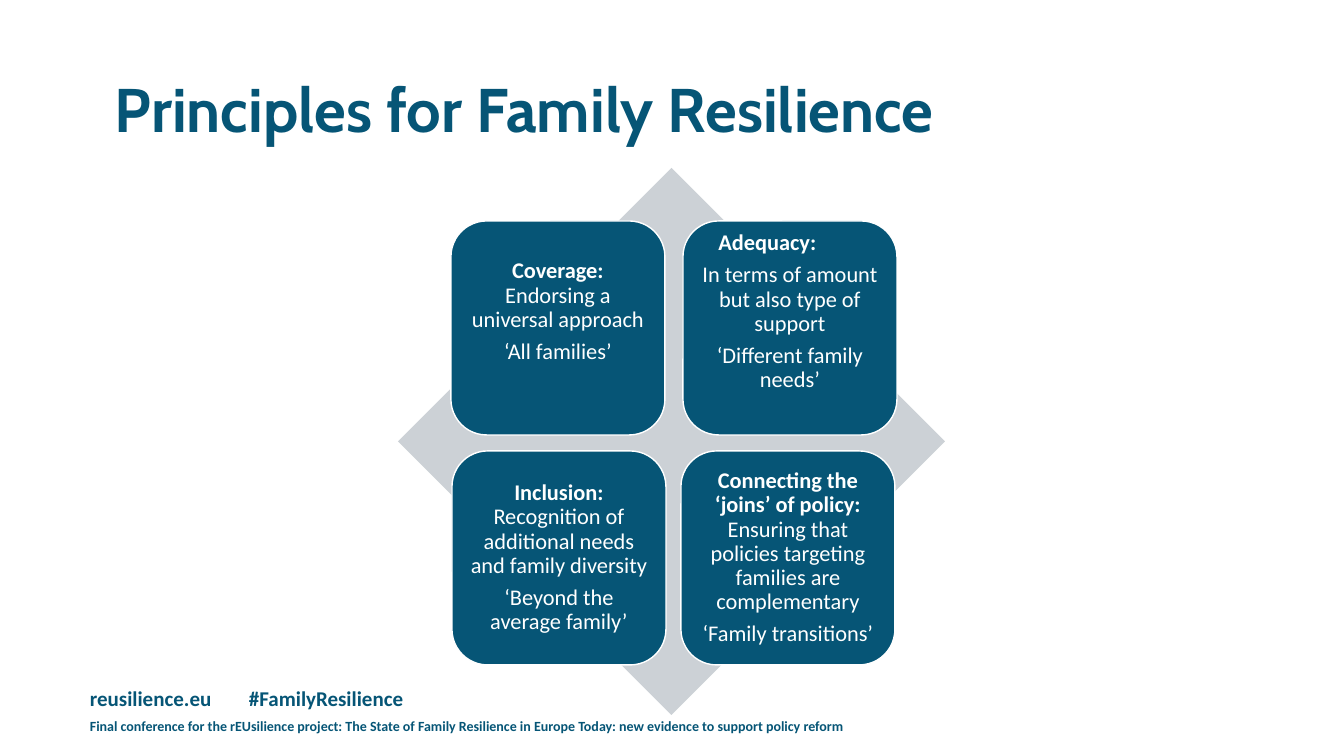
from lxml import etree
from pptx import Presentation
from pptx.dml.color import RGBColor
from pptx.enum.shapes import MSO_SHAPE
from pptx.enum.text import MSO_ANCHOR, PP_ALIGN
from pptx.oxml.ns import qn
from pptx.util import Emu, Pt

DIAMOND, ROUNDED = MSO_SHAPE.DIAMOND, MSO_SHAPE.ROUNDED_RECTANGLE
TOP, MIDDLE = MSO_ANCHOR.TOP, MSO_ANCHOR.MIDDLE
LEFT, CENTER = PP_ALIGN.LEFT, PP_ALIGN.CENTER

COLORS = {"teal": "065576", "grey": "CCD1D6", "white": "FFFFFF"}
EMU_PER_PX = 914400 / 100.8
CARD_SIZE, CARD_INSET, LINE_ROOM = 214, 7, 32

# Each card: offset from the diamond's corner, room kept free below the text,
# paragraphs as (bold text, plain text, left indent or None when centred)
PRINCIPLES = [
    (53, 53, LINE_ROOM, [("Coverage: ", "Endorsing a universal approach", None),
                         ("", "‘All families’", None)]),
    (285, 53, LINE_ROOM, [("Adequacy:", "", 18),
                          ("", "In terms of amount but also type of support", None),
                          ("", "‘Different family needs’", None)]),
    (54, 283, 0, [("Inclusion: ", "Recognition of additional needs and family diversity", None),
                  ("", "‘Beyond the average family’", None)]),
    (283, 283, 0, [("Connecting the ‘joins’ of policy: ",
                    "Ensuring that policies targeting families are complementary", None),
                   ("", "‘Family transitions’", None)]),
]


def px(length):
    return Emu(round(length * EMU_PER_PX))


def rgb(name):
    return RGBColor.from_string(COLORS[name])


def add_run(paragraph, text, size, color="teal", font="Calibri", bold=True):
    run = paragraph.add_run()
    run.text = text
    run.font.size = Pt(size)
    run.font.name = font
    run.font.bold = bold
    run.font.color.rgb = rgb(color)


def add_text(slide, box, text, anchor=TOP, line_spacing=None, tab=None, **style):
    """One-paragraph text box; tab is the position of a tab stop in px."""
    frame = slide.shapes.add_textbox(*map(px, box)).text_frame
    frame.word_wrap = True
    frame.vertical_anchor = anchor
    paragraph = frame.paragraphs[0]
    paragraph.line_spacing = line_spacing
    if tab:
        stops = etree.SubElement(paragraph._p.get_or_add_pPr(), qn("a:tabLst"))
        etree.SubElement(stops, qn("a:tab"), pos=str(px(tab)), algn="l")
    add_run(paragraph, text, **style)


def add_panel(slide, preset, box, fill):
    panel = slide.shapes.add_shape(preset, *map(px, box))
    panel.shadow.inherit = False
    panel.fill.solid()
    panel.fill.fore_color.rgb = rgb(fill)
    panel.line.fill.background()
    return panel


def add_card(slide, box, room_below, paragraphs):
    card = add_panel(slide, ROUNDED, box, "teal")
    card.line.color.rgb = rgb("white")
    card.line.width = Pt(1)
    frame = card.text_frame
    frame.word_wrap = True
    frame.vertical_anchor = MIDDLE
    frame.margin_left = frame.margin_right = frame.margin_top = px(CARD_INSET)
    frame.margin_bottom = px(CARD_INSET + room_below)
    for index, (heading, body, indent) in enumerate(paragraphs):
        paragraph = frame.add_paragraph() if index else frame.paragraphs[0]
        paragraph.alignment = CENTER if indent is None else LEFT
        paragraph.line_spacing = 0.9
        paragraph.space_after = Pt(5.6)
        if indent:
            paragraph._p.get_or_add_pPr().set("marL", str(px(indent)))
        for text, bold in ((heading, True), (body, False)):
            if text:
                add_run(paragraph, text, 16, "white", bold=bold)


def add_principles(slide, box):
    left, top, _, _ = box
    add_panel(slide, DIAMOND, box, "grey")
    for dx, dy, room_below, paragraphs in PRINCIPLES:
        add_card(slide, (left + dx, top + dy, CARD_SIZE, CARD_SIZE), room_below, paragraphs)


def add_footer(slide, box):
    left, top, width, height = box
    add_text(slide, (left, top, 423, height), "reusilience.eu\t#FamilyResilience",
             size=15, tab=159)
    add_text(slide, (left, top + 32, width, 27),
             "Final conference for the rEUsilience project: The State of Family Resilience "
             "in Europe Today: new evidence to support policy reform", size=10)


def main():
    deck = Presentation()
    deck.slide_width, deck.slide_height = px(1344), px(756)
    slide = deck.slides.add_slide(deck.slide_layouts[6])
    add_footer(slide, (80, 681, 796, 62))
    add_text(slide, (105, 40, 1159, 146), "Principles for Family Resilience",
             anchor=MIDDLE, line_spacing=0.9, size=44, font="Cabin")
    add_principles(slide, (398, 168, 547, 547))
    deck.save("out.pptx")


if __name__ == "__main__":
    main()
